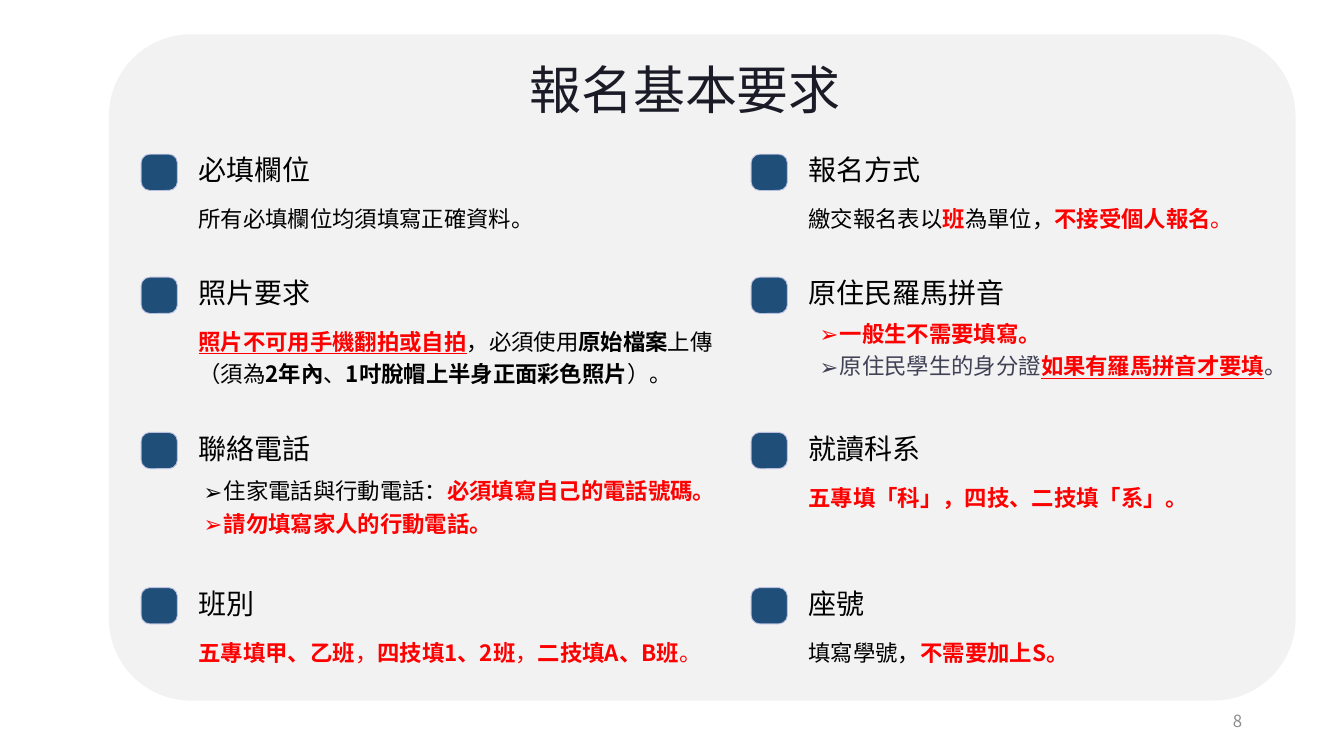
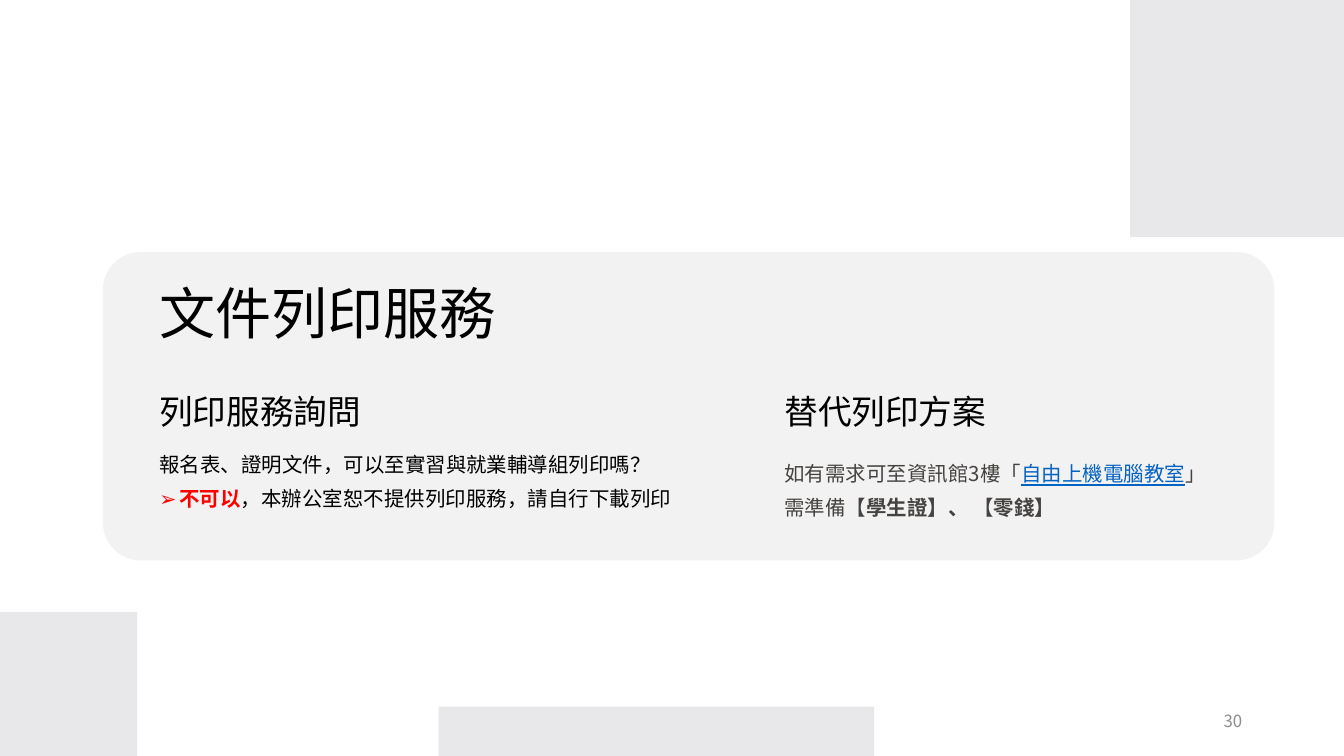
from dataclasses import dataclass

from lxml import etree
from pptx import Presentation
from pptx.dml.color import RGBColor
from pptx.enum import shapes, text
from pptx.oxml import ns
from pptx.util import Inches, Pt


@dataclass(frozen=True)
class Theme:
    font: str = "Noto Sans CJK SC"
    panel: str = "F2F2F2"
    block: str = "E8E8EB"
    marker: str = "1F4E79"
    marker_line: str = "B8BFDF"
    black: str = "000000"
    red: str = "FF0000"
    slate: str = "404155"
    brown: str = "454240"
    link: str = "0563C1"
    title: str = "1B1B27"
    number: str = "8C8C8C"
    number_size: float = 12
    centred_title_size: float = 37.1
    title_size: float = 40
    title_leading: float = 46.2
    card_heading_size: float = 20
    section_heading_size: float = 24
    heading_leading: float = 22.9
    card_size: float = 16
    card_leading: float = 23.3
    section_size: float = 14.6
    section_leading: float = 23.8


theme = Theme()

# Run styles: colour, bold, underline
PLAIN = (theme.black, False, False)
STRONG = (theme.black, True, False)
ALERT = (theme.red, True, False)
ALERT_LIGHT = (theme.red, False, False)
ALERT_LINE = (theme.red, True, True)
SLATE = (theme.slate, False, False)
BROWN = (theme.brown, False, False)
BROWN_STRONG = (theme.brown, True, False)
LINK = (theme.link, False, True)
TITLE = (theme.title, False, False)
NUMBER = (theme.number, False, False)


def add_box(slide, kind, box, fill, radius=None):
    shape = slide.shapes.add_shape(kind, *map(Inches, box))
    shape.shadow.inherit = False
    shape.fill.solid()
    shape.fill.fore_color.rgb = RGBColor.from_string(fill)
    shape.line.fill.background()
    if radius is not None:
        shape.adjustments[0] = radius
    return shape


def add_text(slide, box, paragraphs, size, leading=None, middle=True, wrap=False, bullet_margin=0.31):
    """Each paragraph is (bulleted, [(words, style), ...])."""
    shape = slide.shapes.add_textbox(*map(Inches, box))
    frame = shape.text_frame
    frame.margin_left = frame.margin_right = frame.margin_top = frame.margin_bottom = 0
    frame.word_wrap = wrap
    frame.vertical_anchor = text.MSO_ANCHOR.MIDDLE if middle else text.MSO_ANCHOR.TOP
    for index, (bulleted, runs) in enumerate(paragraphs):
        paragraph = frame.paragraphs[0] if index == 0 else frame.add_paragraph()
        if leading:
            paragraph.line_spacing = Pt(leading)
        if bulleted:
            properties = paragraph._p.get_or_add_pPr()
            properties.set("marL", str(Inches(bullet_margin)))
            properties.set("indent", str(Inches(-0.2)))
            etree.SubElement(properties, ns.qn("a:buFont")).set("typeface", theme.font)
            etree.SubElement(properties, ns.qn("a:buChar")).set("char", "➢")
        for words, (colour, bold, underline) in runs:
            run = paragraph.add_run()
            run.text = words
            run.font.name = theme.font
            run.font.size = Pt(size)
            run.font.bold = bold
            run.font.underline = underline
            run.font.color.rgb = RGBColor.from_string(colour)
            latin = run._r.rPr.find(ns.qn("a:latin"))
            east_asian = etree.Element(ns.qn("a:ea"))
            east_asian.set("typeface", theme.font)
            latin.addnext(east_asian)
    return frame


presentation = Presentation()
presentation.slide_width = Inches(13.33)
presentation.slide_height = Inches(7.5)

# Shared by both slides: rounded panel and page number
slides = []
for panel, number in [((1.08, 0.34, 11.77, 6.61), "8"), ((1.02, 2.5, 11.62, 3.06), "30")]:
    slide = presentation.slides.add_slide(presentation.slide_layouts[6])
    add_box(slide, shapes.MSO_SHAPE.ROUNDED_RECTANGLE, panel, theme.panel, 0.123)
    frame = add_text(slide, (9.42, 6.95, 2.9, 0.4), [(False, [(number, NUMBER)])],
                     theme.number_size, wrap=True)
    frame.paragraphs[0].alignment = text.PP_ALIGN.RIGHT
    slides.append(slide)
requirements, printing = slides

# Registration requirements: two columns of four cards
add_text(requirements, (5.25, 0.55, 3.14, 0.64), [(False, [("報名基本要求", TITLE)])],
         theme.centred_title_size, theme.title_leading)

column_lefts = [1.4, 7.45]
row_tops = [1.53, 2.75, 4.29, 5.83]
line_height = 0.33
# Heading, body offset from the heading (x, y), body height, paragraphs; row by row
cards = [
    ("必填欄位", 0, 0.45, line_height, [(False, [("所有必填欄位均須填寫正確資料。", PLAIN)])]),
    ("報名方式", 0, 0.45, line_height, [
        (False, [("繳交報名表以", PLAIN), ("班", ALERT), ("為單位，", PLAIN),
                 ("不接受個人報名", ALERT), ("。", ALERT_LIGHT)])]),
    ("照片要求", 0, 0.44, 2 * line_height, [
        (False, [("照片不可用手機翻拍或自拍", ALERT_LINE), ("，必須使用", PLAIN), ("原始檔案", STRONG),
                 ("上傳（須為", PLAIN), ("2年內", STRONG), ("、", PLAIN),
                 ("1吋脫帽上半身正面彩色照片", STRONG), ("）。", PLAIN)])]),
    ("原住民羅馬拼音", 0, 0.18, 1.02, [
        (True, [("一般生不需要填寫。", ALERT)]),
        (True, [("原住民學生的身分證", SLATE), ("如果有羅馬拼音才要填", ALERT_LINE), ("。", SLATE)])]),
    ("聯絡電話", -0.06, 0.38, 2 * line_height, [
        (True, [("住家電話與行動電話：", PLAIN), ("必須填寫自己的電話號碼。", ALERT)]),
        (True, [("請勿填寫家人的行動電話。", ALERT)])]),
    ("就讀科系", 0, 0.45, line_height, [(False, [("五專填「科」，四技、二技填「系」。", ALERT)])]),
    ("班別", 0, 0.45, line_height, [
        (False, [("五專填甲、乙班", ALERT), ("，", ALERT_LIGHT), ("四技填1、2班", ALERT),
                 ("，", ALERT_LIGHT), ("二技填A、B班", ALERT), ("。", ALERT_LIGHT)])]),
    ("座號", 0, 0.45, line_height, [(False, [("填寫學號，", PLAIN), ("不需要加上S。", ALERT)])]),
]
for index, (heading, shift_x, shift_y, height, body) in enumerate(cards):
    row, column = divmod(index, len(column_lefts))
    left, top = column_lefts[column], row_tops[row]
    marker = add_box(requirements, shapes.MSO_SHAPE.ROUNDED_RECTANGLE, (left, top, 0.36, 0.36),
                     theme.marker, 0.24)
    marker.line.color.rgb = RGBColor.from_string(theme.marker_line)
    marker.line.width = Pt(0.6)
    text_left = left + 0.57
    add_text(requirements, (text_left, top, 2.58, 0.32), [(False, [(heading, PLAIN)])],
             theme.card_heading_size, theme.heading_leading)
    add_text(requirements, (text_left + shift_x, top + shift_y, 5.28, height), body,
             theme.card_size, theme.card_leading, wrap=height > line_height)

# Printing service: corner blocks, title and two sections
for block in [(4.35, 7.01, 4.32, 0.49), (0, 6.07, 1.36, 1.43), (11.21, 0, 2.12, 2.35)]:
    add_box(printing, shapes.MSO_SHAPE.RECTANGLE, block, theme.block)

add_text(printing, (1.58, 2.79, 4, 0.65), [(False, [("文件列印服務", PLAIN)])],
         theme.title_size, theme.title_leading, middle=False)

sections = [
    ("列印服務詢問", (1.58, 4.4, 5.69, 0.76), [
        (False, [("報名表、證明文件，可以至實習與就業輔導組列印嗎？", PLAIN)]),
        (True, [("不可以", ALERT), ("，本辦公室恕不提供列印服務，請自行下載列印", PLAIN)])]),
    ("替代列印方案", (7.78, 4.49, 4.86, 0.67), [
        (False, [("如有需求可至資訊館3樓「", BROWN), ("自由上機電腦教室", LINK), ("」", BROWN)]),
        (False, [("需準備【", BROWN), ("學生證】、", BROWN_STRONG), (" 【", BROWN),
                 ("零錢】", BROWN_STRONG)])]),
]
for heading, box, body in sections:
    add_text(printing, (box[0], 3.96, 2.58, 0.32), [(False, [(heading, PLAIN)])],
             theme.section_heading_size, theme.heading_leading, middle=False)
    add_text(printing, box, body, theme.section_size, theme.section_leading,
             middle=False, bullet_margin=0.2)

presentation.save("out.pptx")
